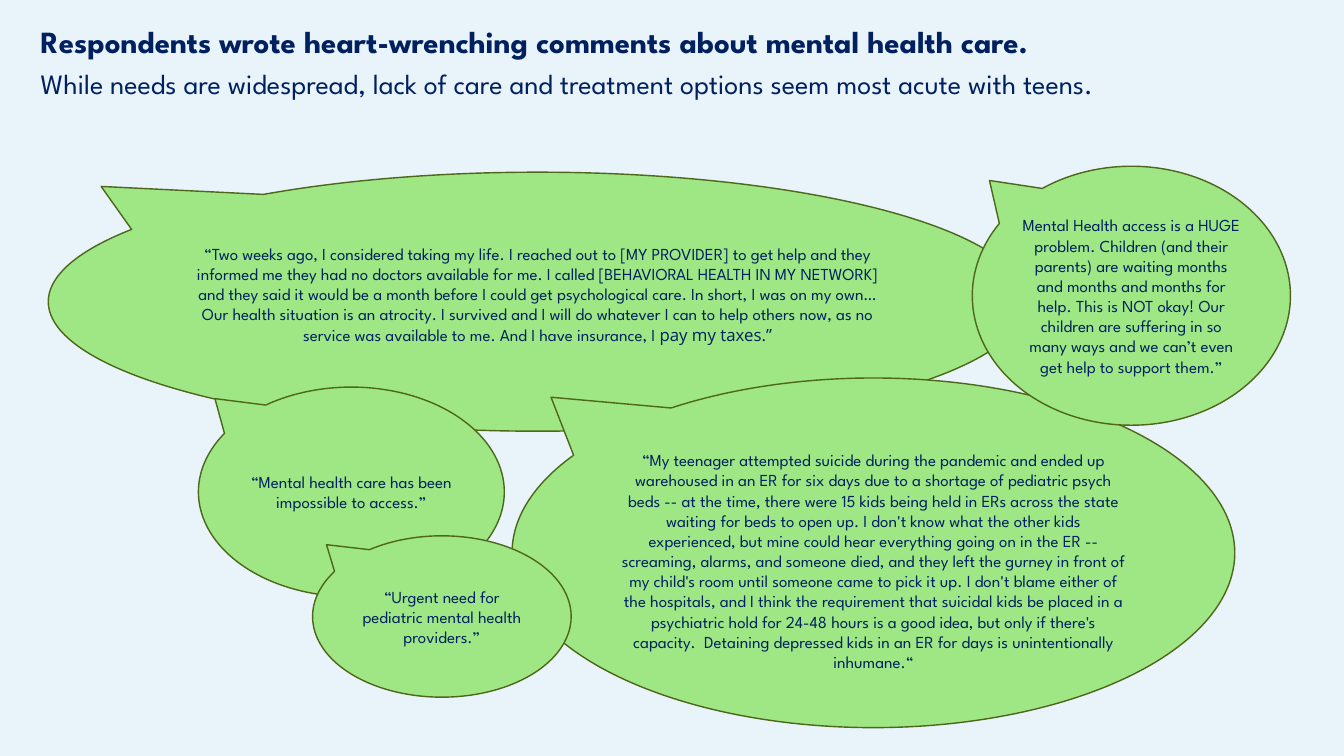
from pptx import Presentation
from pptx.dml.color import RGBColor
from pptx.enum.shapes import MSO_SHAPE as Shape
from pptx.enum.text import MSO_ANCHOR as Anchor, MSO_AUTO_SIZE as AutoSize, PP_ALIGN as Align
from pptx.util import Pt

# Content: headline lines as (text, size name, bold)
HEADLINE = [
    ("Respondents wrote heart-wrenching comments about mental health care.", "title", True),
    ("While needs are widespread, lack of care and treatment options seem most acute "
     "with teens.", "subtitle", False),
]
# Quotes from back to front: left, top, width, height, top inset, bottom inset,
# and runs of (font name, text)
QUOTES = [
    (69, 246, 1398, 370, 5, 27, [
        ("main", "“Two weeks ago, I considered taking my life. I reached out to [MY PROVIDER] to "
         "get help and they informed me they had no doctors available for me. I called "
         "[BEHAVIORAL HEALTH IN MY NETWORK] and they said it would be a month before I could "
         "get psychological care. In short, I was on my own…Our health situation is an "
         "atrocity. I survived and I will do whatever I can to help others now, as no service "
         "was available to me. And I have insurance, I "),
        ("alternate", "pay my taxes.”")]),
    (731.5, 540, 1032.5, 499.5, 28, 5, [
        ("main", "“My teenager attempted suicide during the pandemic and ended up warehoused in "
         "an ER for six days due to a shortage of pediatric psych beds -- at the time, there "
         "were 15 kids being held in ERs across the state waiting for beds to open up. I don't "
         "know what the other kids experienced, but mine could hear everything going on in the "
         "ER -- screaming, alarms, and someone died, and they left the gurney in front of my "
         "child's room until someone came to pick it up. I don't blame either of the hospitals, "
         "and I think the requirement that suicidal kids be placed in a psychiatric hold for "
         "24-48 hours is a good idea, but only if there's capacity.  Detaining depressed kids "
         "in an ER for days is unintentionally inhumane.“")]),
    (283.5, 553, 437, 299.5, 5, 5, [
        ("main", "“Mental health care has been impossible to access.”")]),
    (1389, 237.5, 454.5, 370, 5, 5, [
        ("main", "Mental Health access is a HUGE problem. Children (and their parents) are "
         "waiting months and months and months for help. This is NOT okay! Our children are "
         "suffering in so many ways and we can’t even get help to support them.”")]),
    (446.5, 765.5, 369.5, 230.5, 5, 5, [
        ("main", "“Urgent need for pediatric mental health providers.”")]),
]
THEME = {
    "background": RGBColor.from_string("E8F3FA"),
    "text": RGBColor.from_string("002060"),
    "bubble": RGBColor.from_string("9FE785"),
    "outline": RGBColor.from_string("4F671B"),
    "main": "League Spartan",
    "alternate": "Open Sans",
    "title": Pt(44),
    "subtitle": Pt(40),
    "quote": Pt(24),
}
TAIL = (-0.446, -0.445)  # tail tip, as a share of the bubble's size from its centre


def style(font, name, size, bold=False):
    font.name = THEME[name]
    font.size = THEME[size]
    font.bold = bold
    font.color.rgb = THEME["text"]


def add_headline(page):
    title = page.shapes.title
    title.left, title.top, title.width, title.height = map(Pt, (51, 18, 1852, 147))
    frame = title.text_frame
    frame.auto_size = AutoSize.NONE
    frame.vertical_anchor = Anchor.TOP
    frame.word_wrap = True
    for index, (text, size, bold) in enumerate(HEADLINE):
        para = frame.add_paragraph() if index else frame.paragraphs[0]
        para.text = text
        para.alignment = Align.LEFT
        para.line_spacing = 1.2
        para.space_before = Pt(0)
        style(para.font, "main", size, bold)


def add_bubble(page, left, top, width, height, top_inset, bottom_inset, runs):
    bubble = page.shapes.add_shape(Shape.OVAL_CALLOUT, *map(Pt, (left, top, width, height)))
    bubble.adjustments[0], bubble.adjustments[1] = TAIL
    bubble.shadow.inherit = False
    bubble.fill.solid()
    bubble.fill.fore_color.rgb = THEME["bubble"]
    bubble.line.color.rgb = THEME["outline"]
    bubble.line.width = Pt(2)

    frame = bubble.text_frame
    frame.word_wrap = True
    frame.vertical_anchor = Anchor.MIDDLE
    frame.margin_left = frame.margin_right = Pt(5)
    frame.margin_top, frame.margin_bottom = Pt(top_inset), Pt(bottom_inset)
    para = frame.paragraphs[0]
    para.alignment = Align.CENTER
    style(para.font, "main", "quote")
    for font_name, text in runs:
        span = para.add_run()
        span.text = text
        style(span.font, font_name, "quote")


def main():
    deck = Presentation()
    deck.slide_width, deck.slide_height = Pt(1920), Pt(1080)
    page = deck.slides.add_slide(deck.slide_layouts[5])  # title only
    page.background.fill.solid()
    page.background.fill.fore_color.rgb = THEME["background"]
    add_headline(page)
    for quote in QUOTES:
        add_bubble(page, *quote)
    deck.save("out.pptx")


if __name__ == "__main__":
    main()
